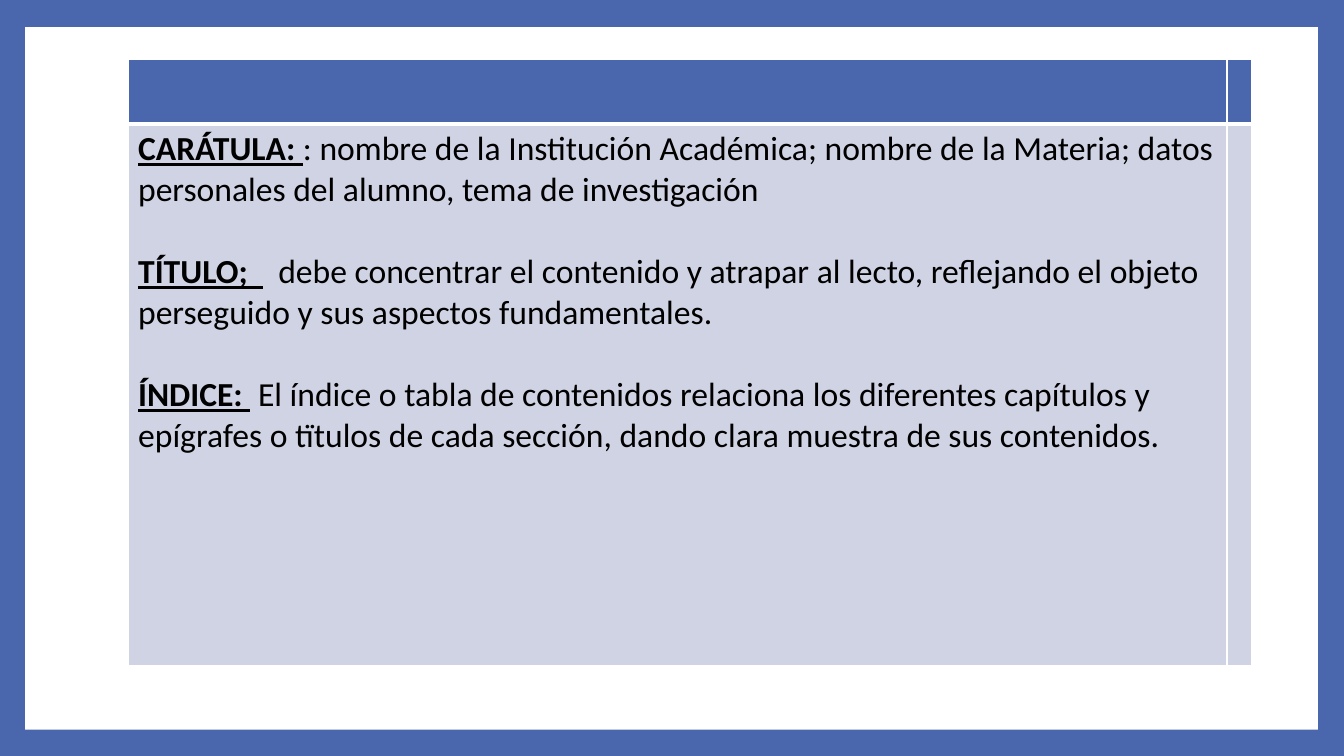
"""Build a slide with a framed table of report sections."""
from lxml.etree import SubElement
from pptx import Presentation
from pptx.dml.color import RGBColor
from pptx.enum.shapes import MSO_SHAPE
from pptx.oxml.ns import qn
from pptx.util import Inches, Pt

WIDE, HIGH = 13.33, 7.5
COLORS = {"blue": "4A66AC", "pale": "D0D3E3", "white": "FFFFFF", "black": "000000"}
COLS, ROWS = (10.9, 0.24), (0.64, 5.37)
PARTS = (
    ("CARÁTULA: ", ": nombre de la Institución Académica; nombre de la Materia; "
     "datos personales del alumno, tema de investigación"),
    ("TÍTULO;  ", "  debe concentrar el contenido y atrapar al lecto, "
     "reflejando el objeto perseguido y sus aspectos fundamentales."),
    ("ÍNDICE: ", " El índice o tabla de contenidos relaciona los diferentes capítulos y "
     "epígrafes o tïtulos de cada sección, dando clara muestra de sus contenidos."),
)


def paint(fill, name):
    fill.solid()
    fill.fore_color.rgb = RGBColor.from_string(COLORS[name])


def write(para, text, size=24, face="Calibri", color="black", bold=False, under=False):
    run = para.add_run()
    run.text = text
    font = run.font
    font.size, font.name, font.bold, font.underline = Pt(size), face, bold, under
    font.color.rgb = RGBColor.from_string(COLORS[color])


def edge(cell, side, width):
    line = SubElement(cell._tc.get_or_add_tcPr(), qn(f"a:ln{side}"), w=str(Pt(width)))
    fill = SubElement(line, qn("a:solidFill"))
    SubElement(fill, qn("a:srgbClr"), val=COLORS["white"])


def panel(slide):
    box = slide.shapes.add_shape(
        MSO_SHAPE.RECTANGLE, Inches(0.25), Inches(0.27), Inches(12.82), Inches(6.97))
    box.shadow.inherit = False
    paint(box.fill, "white")
    box.line.fill.background()


def grid(slide):
    frame = slide.shapes.add_table(
        len(ROWS), len(COLS), Inches(1.27), Inches(0.59),
        Inches(sum(COLS)), Inches(sum(ROWS)))
    table = frame.table
    for col, width in zip(table.columns, COLS):
        col.width = Inches(width)
    for index, (row, height) in enumerate(zip(table.rows, ROWS)):
        row.height = Inches(height)
        thick = "T" if index else "B"
        for cell in row.cells:
            for side in "LRTB":
                edge(cell, side, 3 if side == thick else 1)
            paint(cell.fill, "pale" if index else "blue")
    return table


def fill_in(cell):
    frame = cell.text_frame
    for index, (head, body) in enumerate(PARTS):
        para = frame.add_paragraph() if index else frame.paragraphs[0]
        para.space_before = Pt(29.3 if index else 0)
        write(para, head, bold=True, under=True)
        write(para, body)


def main():
    deck = Presentation()
    deck.slide_width, deck.slide_height = Inches(WIDE), Inches(HIGH)
    slide = deck.slides.add_slide(deck.slide_layouts[6])
    paint(slide.background.fill, "blue")
    panel(slide)
    fill_in(grid(slide).cell(1, 0))
    deck.save("out.pptx")


if __name__ == "__main__":
    main()
